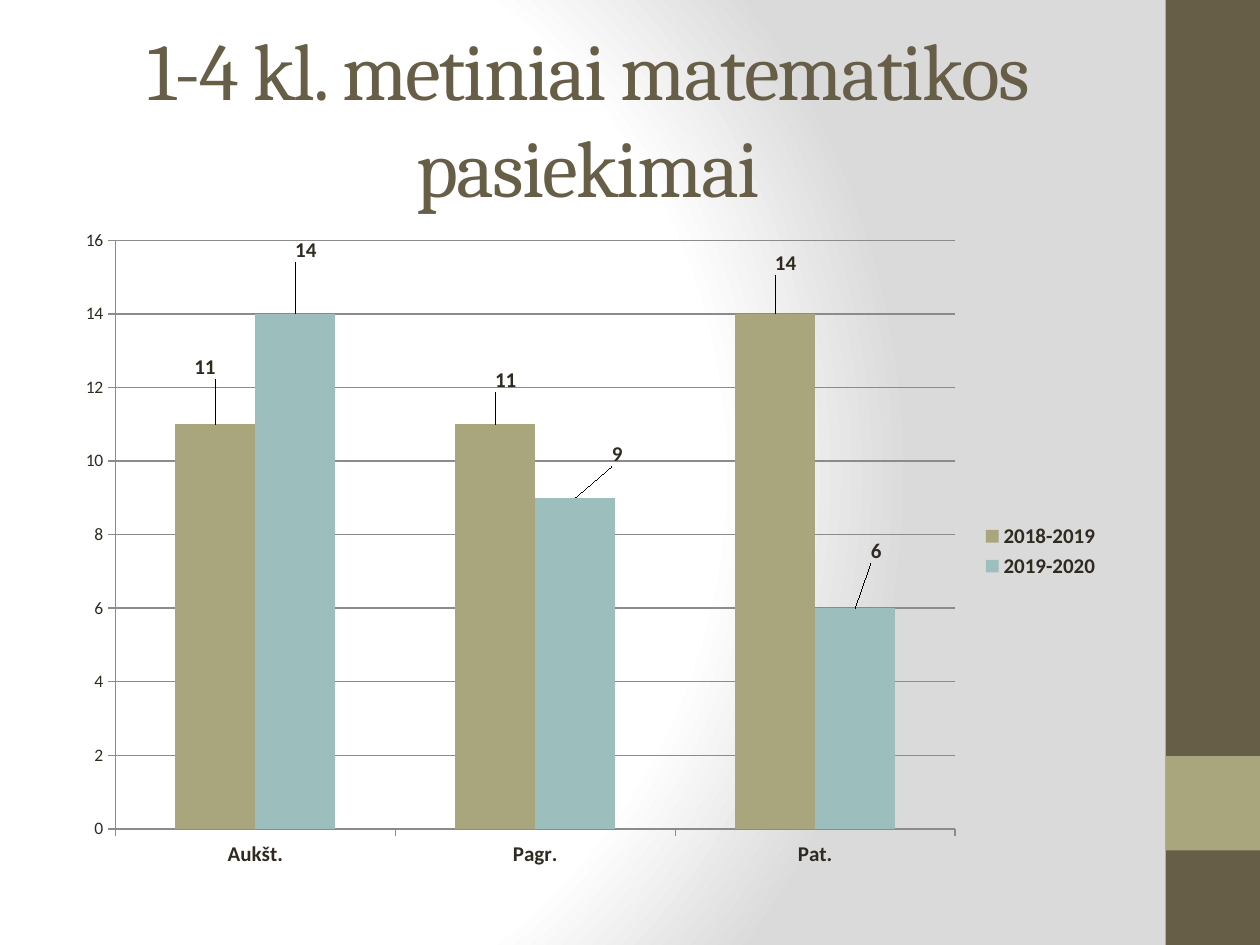
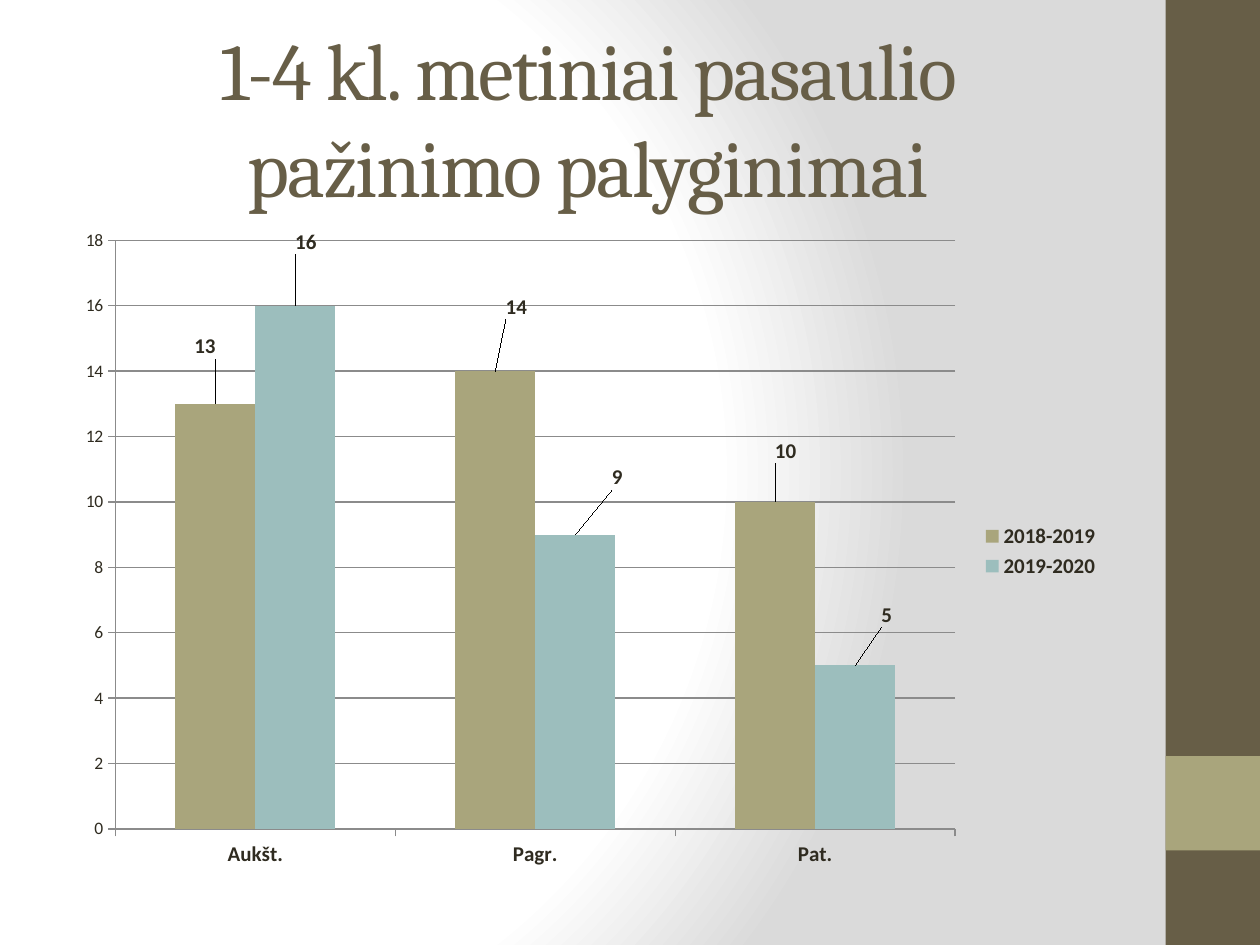
from dataclasses import dataclass

from lxml import etree
from pptx import Presentation
from pptx.chart.data import CategoryChartData
from pptx.dml.color import RGBColor
from pptx.enum.chart import XL_CHART_TYPE, XL_LABEL_POSITION, XL_LEGEND_POSITION, XL_TICK_MARK
from pptx.enum.shapes import MSO_SHAPE
from pptx.enum.text import MSO_ANCHOR, MSO_AUTO_SIZE, PP_ALIGN
from pptx.oxml import parse_xml
from pptx.oxml.ns import nsdecls, qn
from pptx.util import Inches, Pt

COLUMNS = XL_CHART_TYPE.COLUMN_CLUSTERED
OUTSIDE_END = XL_LABEL_POSITION.OUTSIDE_END
LEGEND_RIGHT = XL_LEGEND_POSITION.RIGHT
TICK_OUT, TICK_NONE = XL_TICK_MARK.OUTSIDE, XL_TICK_MARK.NONE
RECTANGLE = MSO_SHAPE.RECTANGLE
MIDDLE, CENTER = MSO_ANCHOR.MIDDLE, PP_ALIGN.CENTER
NO_AUTOFIT = MSO_AUTO_SIZE.NONE
TITLE_ONLY = 5


@dataclass(frozen=True)
class Theme:
    """Colours, fonts and type sizes of the deck."""
    brown: str = "675E47"
    olive: str = "A9A57C"
    teal: str = "9CBEBD"
    ink: str = "2F2B20"
    rule: str = "8B8B8B"
    backdrop: tuple = ((0, "FFFFFF"), (75, "FFFFFF"), (100, "DADADA"))
    heading_font: str = "Cambria"
    body_font: str = "Calibri"
    title_size: int = 46
    tick_size: int = 10
    label_size: int = 12


@dataclass(frozen=True)
class Box:
    """A rectangle in inches."""
    left: float
    top: float
    width: float
    height: float

    def lengths(self):
        """Return the four lengths for python-pptx."""
        return [Inches(n) for n in (self.left, self.top, self.width, self.height)]


THEME = Theme()
PAGE_SIZE = (10, 7.5)
TITLE_BOX = Box(0.5, 0.3, 8.33, 1.25)
CHART_BOX = Box(0.5, 1.75, 8.33, 5.25)
BAND_BOX = Box(9.25, 0, 0.75, 7.5)
CATEGORIES = ("Aukšt.", "Pagr.", "Pat.")
YEARS = (("2018-2019", THEME.olive), ("2019-2020", THEME.teal))
PAGES = (
    {
        "title": "1-4 kl. metiniai matematikos pasiekimai",
        "values": ((11, 11, 14), (14, 9, 6)),
        "label_shifts": (
            ((-0.01, -0.06), (0.01, -0.04), (0.01, -0.05)),
            ((0.01, -0.07), (0.04, -0.04), (0.02, -0.06)),
        ),
        "axis_top": 16,
    },
    {
        "title": "1-4 kl. metiniai pasaulio pažinimo palyginimai",
        "values": ((13, 14, 10), (16, 9, 5)),
        "label_shifts": (
            ((-0.01, -0.06), (0.02, -0.07), (0.01, -0.05)),
            ((0.01, -0.07), (0.04, -0.06), (0.03, -0.05)),
        ),
        "axis_top": 18,
    },
)


def style_font(font, size, color, name, bold=False):
    """Set the face, size, colour and weight of a font."""
    font.name, font.size, font.bold = name, Pt(size), bold
    font.color.rgb = RGBColor.from_string(color)


def style_line(line):
    """Give a chart line the thin grey rule."""
    line.color.rgb = RGBColor.from_string(THEME.rule)
    line.width = Pt(0.75)


def manual_layout(**settings):
    """Build a chart layout element from ordered settings."""
    layout = parse_xml(f"<c:layout {nsdecls('c')}><c:manualLayout/></c:layout>")
    for name, value in settings.items():
        etree.SubElement(layout[0], qn(f"c:{name}")).set("val", str(value))
    return layout


def paint_backdrop(page):
    """Fill the page background with the circular gradient."""
    page.background.fill.solid()
    properties = page.element.find(".//" + qn("p:bgPr"))
    stops = "".join(
        f'<a:gs pos="{place * 1000}"><a:srgbClr val="{color}"/></a:gs>'
        for place, color in THEME.backdrop
    )
    properties.replace(properties[0], parse_xml(
        f'<a:gradFill {nsdecls("a")} rotWithShape="1"><a:gsLst>{stops}</a:gsLst>'
        '<a:path path="circle"><a:fillToRect l="20000" t="50000" r="100000" b="50000"/>'
        "</a:path></a:gradFill>"
    ))


def add_side_band(page, box):
    """Draw the brown side band with its olive square."""
    square = Box(box.left, box.top + box.height - 2 * box.width, box.width, box.width)
    for part, color in ((box, THEME.brown), (square, THEME.olive)):
        band = page.shapes.add_shape(RECTANGLE, *part.lengths())
        band.shadow.inherit = False
        band.fill.solid()
        band.fill.fore_color.rgb = RGBColor.from_string(color)
        band.line.fill.background()


def write_title(page, box, text):
    """Place and format the title placeholder."""
    title = page.shapes.title
    title.left, title.top, title.width, title.height = box.lengths()
    frame = title.text_frame
    frame.word_wrap, frame.auto_size, frame.vertical_anchor = True, NO_AUTOFIT, MIDDLE
    para = frame.paragraphs[0]
    para.alignment = CENTER
    span = para.add_run()
    span.text = text
    style_font(span.font, THEME.title_size, THEME.brown, THEME.heading_font)
    span.font._element.set("spc", "-100")


def style_series(series, color, shifts):
    """Colour one series and place its value labels."""
    series.format.fill.solid()
    series.format.fill.fore_color.rgb = RGBColor.from_string(color)
    labels = series.data_labels
    labels.show_value = True
    labels.position = OUTSIDE_END
    style_font(labels.font, THEME.label_size, THEME.ink, THEME.body_font, True)
    for index, (across, down) in enumerate(shifts):
        label = series.points[index].data_label
        style_font(label.font, THEME.label_size, THEME.ink, THEME.body_font, True)
        label.position = OUTSIDE_END
    for item, (across, down) in zip(labels._element.findall(qn("c:dLbl")), shifts):
        item.find(qn("c:idx")).addnext(manual_layout(x=across, y=down))


def style_axes(chart, axis_top):
    """Format both axes and the gridlines."""
    for axis in (chart.category_axis, chart.value_axis):
        axis.major_tick_mark, axis.minor_tick_mark = TICK_OUT, TICK_NONE
        style_line(axis.format.line)
    style_font(chart.category_axis.tick_labels.font, THEME.label_size,
               THEME.ink, THEME.body_font, True)
    values = chart.value_axis
    values.minimum_scale, values.maximum_scale, values.major_unit = 0, axis_top, 2
    values.has_major_gridlines = True
    style_line(values.major_gridlines.format.line)


def add_results_chart(page, box, values, label_shifts, axis_top):
    """Add the column chart that compares two school years."""
    data = CategoryChartData()
    data.categories = CATEGORIES
    for (year, _), results in zip(YEARS, values):
        data.add_series(year, results)
    chart = page.shapes.add_chart(COLUMNS, *box.lengths(), data).chart
    chart.has_title = False
    style_font(chart.font, THEME.tick_size, THEME.ink, THEME.body_font)
    chart.has_legend = True
    chart.legend.position = LEGEND_RIGHT
    chart.legend.include_in_layout = False
    style_font(chart.legend.font, THEME.label_size, THEME.ink, THEME.body_font, True)
    style_axes(chart, axis_top)
    plot = chart.plots[0]
    plot.gap_width, plot.overlap, plot.vary_by_categories = 150, 0, False
    for series, (_, color), shifts in zip(plot.series, YEARS, label_shifts):
        style_series(series, color, shifts)
    area = chart._chartSpace.find(".//" + qn("c:plotArea"))
    for layout in area.findall(qn("c:layout")):
        area.remove(layout)
    area.insert(0, manual_layout(layoutTarget="inner", xMode="edge", yMode="edge",
                                 x=0.05, y=0.03, w=0.8, h=0.89))


def add_results_page(deck, title, values, label_shifts, axis_top):
    """Add one page with a title and a results chart."""
    page = deck.slides.add_slide(deck.slide_layouts[TITLE_ONLY])
    paint_backdrop(page)
    add_side_band(page, BAND_BOX)
    write_title(page, TITLE_BOX, title)
    add_results_chart(page, CHART_BOX, values, label_shifts, axis_top)


def main():
    """Build and save the deck."""
    deck = Presentation()
    deck.slide_width, deck.slide_height = (Inches(n) for n in PAGE_SIZE)
    for content in PAGES:
        add_results_page(deck, **content)
    deck.save("out.pptx")


if __name__ == "__main__":
    main()
